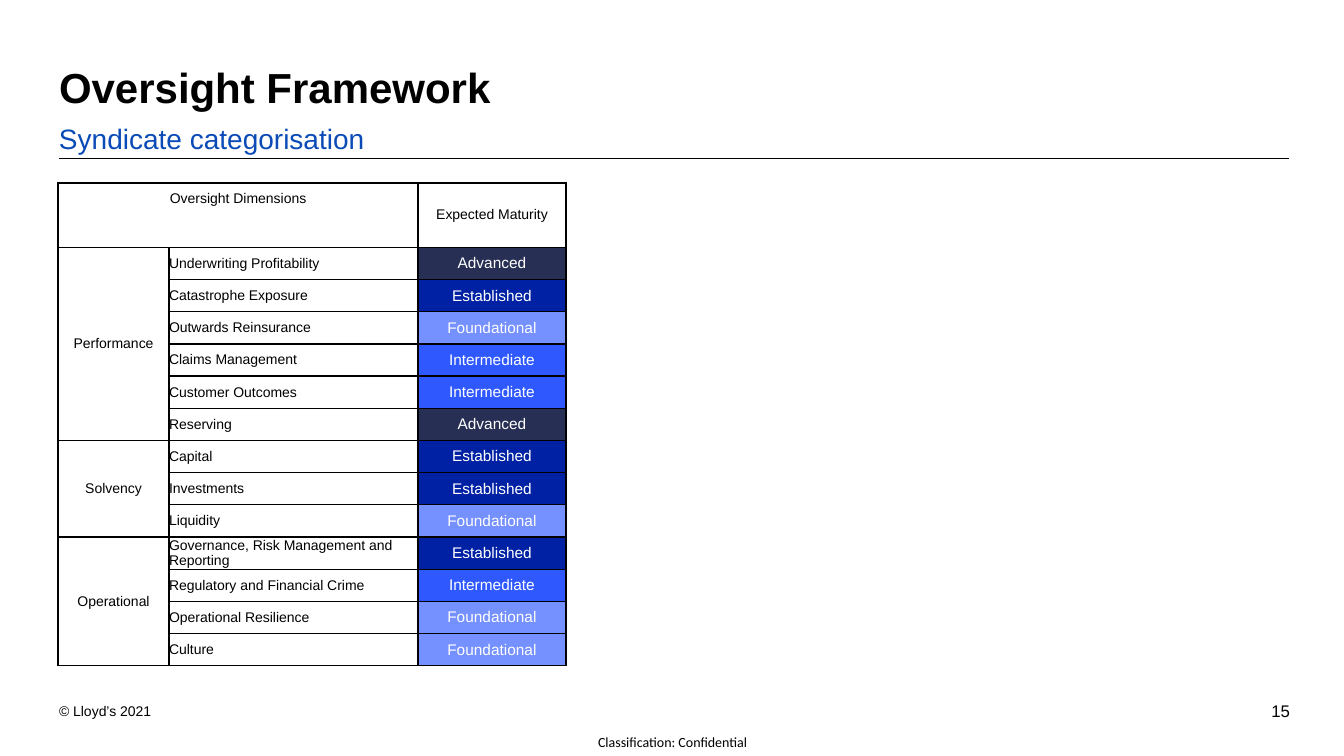
from lxml.etree import SubElement
from pptx import Presentation
from pptx.dml.color import RGBColor as RGB
from pptx.enum.shapes import MSO_CONNECTOR as Conn
from pptx.enum.text import MSO_ANCHOR as Anchor, PP_ALIGN as Align
from pptx.oxml.ns import qn
from pptx.util import Pt

INK = {
    "black": "000000", "white": "FFFFFF", "blue": "0A4BB7",
    "Advanced": "282F54", "Established": "0021A4",
    "Intermediate": "2F59FF", "Foundational": "7590FF",
}
TITLE = "Oversight Framework"
HEADS = ("Oversight Dimensions", "Expected Maturity")
GROUPS = [
    ("Performance", [
        ("Underwriting Profitability", "Advanced"),
        ("Catastrophe Exposure", "Established"),
        ("Outwards Reinsurance", "Foundational"),
        ("Claims Management", "Intermediate"),
        ("Customer Outcomes", "Intermediate"),
        ("Reserving", "Advanced"),
    ]),
    ("Solvency", [
        ("Capital", "Established"),
        ("Investments", "Established"),
        ("Liquidity", "Foundational"),
    ]),
    ("Operational", [
        ("Governance, Risk Management and Reporting", "Established"),
        ("Regulatory and Financial Crime", "Intermediate"),
        ("Operational Resilience", "Foundational"),
        ("Culture", "Foundational"),
    ]),
]
LABELS = [
    ("Syndicate categorisation", (59, 121, 1230, 34), 20, "Arial", "blue", Align.LEFT, Anchor.TOP),
    ("© Lloyd’s 2021", (59, 703, 164, 17), 10, "Arial", "black", Align.LEFT, Anchor.TOP),
    ("15", (1258, 697, 32, 28), 12, "Arial", "black", Align.RIGHT, Anchor.MIDDLE),
    ("Classification: Confidential", (581, 727, 183, 29), 10, "Calibri", "black", Align.CENTER, Anchor.MIDDLE),
]
COLS = (111, 249, 148)
HEAD_ROWS = 2
SCALE = 914400 / 100.8


def px(n):
    return round(n * SCALE)


def style(para, size, face, tone, align, bold=False):
    para.alignment = align
    font = para.font
    font.size, font.name, font.bold = Pt(size), face, bold
    font.color.rgb = RGB.from_string(INK[tone])


def inset(frame, edge=0):
    frame.word_wrap = True
    frame.margin_left = frame.margin_right = 0
    frame.margin_top = frame.margin_bottom = px(edge)


def label(slide, text, box, size, face, tone, align, anchor):
    frame = slide.shapes.add_textbox(*map(px, box)).text_frame
    inset(frame)
    frame.vertical_anchor = anchor
    frame.text = text
    style(frame.paragraphs[0], size, face, tone, align)


def border(cell, hide):
    props = cell._tc.get_or_add_tcPr()
    for side in "LRTB":
        line = SubElement(props, qn("a:ln" + side), w=str(Pt(1)))
        if side in hide:
            SubElement(line, qn("a:noFill"))
        else:
            fill = SubElement(line, qn("a:solidFill"))
            SubElement(fill, qn("a:srgbClr"), val=INK["black"])


def write(cell, text, size=10, tone="black", align=Align.CENTER):
    cell.text = text
    style(cell.text_frame.paragraphs[0], size, "Arial", tone, align)


def matrix(slide):
    count = HEAD_ROWS + sum(len(items) for _, items in GROUPS)
    table = slide.shapes.add_table(
        count, len(COLS), px(58), px(183), px(sum(COLS)), px(483)).table
    table.first_row = table.horz_banding = False
    for col, width in zip(table.columns, COLS):
        col.width = px(width)
    hidden = {(0, 0): "BR", (0, 1): "BL", (1, 0): "TR", (1, 1): "TL"}
    for r in range(count):
        for c in range(len(COLS)):
            cell = table.cell(r, c)
            cell.margin_left = cell.margin_right = 0
            cell.margin_top = cell.margin_bottom = 0
            cell.vertical_anchor = Anchor.MIDDLE
            border(cell, hidden.get((r, c), ""))
            cell.fill.background()
    table.cell(0, 0).merge(table.cell(0, 1))
    table.cell(0, 2).merge(table.cell(1, 2))
    write(table.cell(0, 0), HEADS[0])
    write(table.cell(0, 2), HEADS[1])
    row = HEAD_ROWS
    for group, items in GROUPS:
        table.cell(row, 0).merge(table.cell(row + len(items) - 1, 0))
        write(table.cell(row, 0), group)
        for name, level in items:
            write(table.cell(row, 1), name, align=Align.LEFT)
            cell = table.cell(row, 2)
            write(cell, level, 11, "white")
            cell.fill.solid()
            cell.fill.fore_color.rgb = RGB.from_string(INK[level])
            row += 1


def main():
    deck = Presentation()
    deck.slide_width, deck.slide_height = px(1344), px(756)
    slide = deck.slides.add_slide(deck.slide_layouts[5])

    title = slide.shapes.title
    title.left, title.top, title.width, title.height = map(px, (59, 59, 1230, 61))
    frame = title.text_frame
    inset(frame, 8)
    frame.vertical_anchor = Anchor.MIDDLE
    frame.text = TITLE
    style(frame.paragraphs[0], 30, "Arial", "black", Align.LEFT, True)
    frame.paragraphs[0].line_spacing = 0.9

    rule = slide.shapes.add_connector(Conn.STRAIGHT, *map(px, (59, 158, 1289, 158)))
    rule.line.width = Pt(0.5)
    rule.line.color.rgb = RGB.from_string(INK["black"])
    SubElement(rule._element.spPr, qn("a:effectLst"))

    matrix(slide)
    for item in LABELS:
        label(slide, *item)
    deck.save("out.pptx")


if __name__ == "__main__":
    main()
